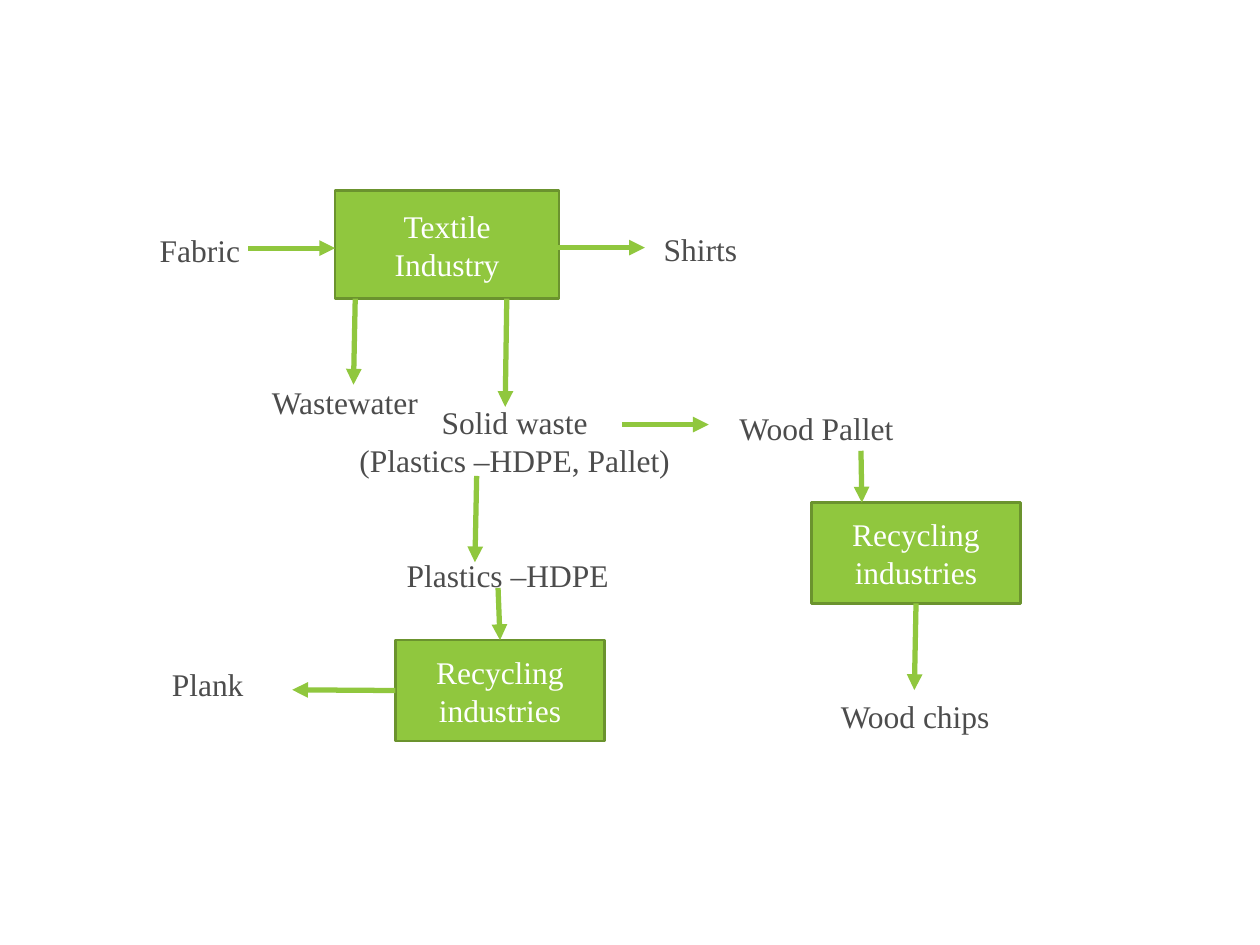
from lxml.etree import SubElement
from pptx import Presentation
from pptx.dml.color import RGBColor
from pptx.enum.shapes import MSO_CONNECTOR as Connector, MSO_SHAPE as Shape
from pptx.enum.text import MSO_ANCHOR as Anchor, MSO_AUTO_SIZE as AutoSize, PP_ALIGN as Align
from pptx.oxml.ns import qn
from pptx.util import Pt

GREEN = "90C73E"
DARK_GREEN = "6B932E"
GREY = "4C4C4C"
WHITE = "FFFFFF"
TOP, LEFT, BOTTOM = 0, 1, 2


def color(hex_text):
    return RGBColor.from_string(hex_text)


def write(shape, text, text_color, align):
    frame = shape.text_frame
    frame.text = text
    for para in frame.paragraphs:
        para.alignment = align
        for span in para.runs:
            span.font.name = "Times New Roman"
            span.font.size = Pt(18)
            span.font.color.rgb = color(text_color)


def add_process(page, text, left, top, width, height):
    box = page.shapes.add_shape(Shape.RECTANGLE, Pt(left), Pt(top), Pt(width), Pt(height))
    box.shadow.inherit = False
    box.fill.solid()
    box.fill.fore_color.rgb = color(GREEN)
    box.line.color.rgb = color(DARK_GREEN)
    box.line.width = Pt(1.5)
    box.text_frame.word_wrap = True
    box.text_frame.vertical_anchor = Anchor.MIDDLE
    write(box, text, WHITE, Align.CENTER)
    return box


def add_label(page, text, left, top, width, height=29, align=Align.CENTER):
    box = page.shapes.add_textbox(Pt(left), Pt(top), Pt(width), Pt(height))
    box.text_frame.word_wrap = False
    box.text_frame.auto_size = AutoSize.SHAPE_TO_FIT_TEXT
    write(box, text, GREY, align)


def add_arrow(page, start, end, source=None, target=None):
    arrow = page.shapes.add_connector(Connector.STRAIGHT, *map(Pt, start + end))
    if source:
        arrow.begin_connect(*source)
    if target:
        arrow.end_connect(*target)
    arrow.line.color.rgb = color(GREEN)
    arrow.line.width = Pt(3)
    SubElement(arrow.line._get_or_add_ln(), qn("a:tailEnd"), type="triangle")
    SubElement(arrow._element.spPr, qn("a:effectLst"))


def main():
    deck = Presentation()
    deck.slide_width, deck.slide_height = Pt(720), Pt(540)
    page = deck.slides.add_slide(deck.slide_layouts[6])

    add_process(page, "Textile\nIndustry", 191.5, 108.7, 128, 62)
    plank_maker = add_process(page, "Recycling industries", 226, 365.8, 119.5, 57.6)
    chip_maker = add_process(page, "Recycling industries", 463.7, 287.2, 119.5, 57.6)

    add_label(page, "Fabric", 84.2, 128.5, 61, align=Align.LEFT)
    add_label(page, "Shirts", 372.2, 128, 57, align=Align.LEFT)
    add_label(page, "Wastewater", 148.3, 215.3, 98.6, align=Align.LEFT)
    add_label(page, "Solid waste\n(Plastics –HDPE, Pallet)", 197.3, 226.8, 193.7, 51)
    add_label(page, "Wood Pallet", 414.7, 230.4, 103.7)
    add_label(page, "Plastics –HDPE", 224.6, 314, 131)
    add_label(page, "Wood chips", 473, 394.6, 100)
    add_label(page, "Plank", 90.7, 376.6, 56)

    add_arrow(page, (142, 141.8), (191.5, 141.8))
    add_arrow(page, (319, 141.5), (368.5, 141.5))
    add_arrow(page, (203, 170.7), (202, 219.8))
    add_arrow(page, (289.6, 170.7), (288.7, 232.5))
    add_arrow(page, (355.5, 242.6), (405, 242.6))
    add_arrow(page, (272.4, 272), (271.4, 321.3))
    add_arrow(page, (492, 257.6), (492.5, 287.2))
    add_arrow(page, (284.6, 336), (285.75, 365.8), target=(plank_maker, TOP))
    add_arrow(page, (226, 394.6), (167, 394.2), source=(plank_maker, LEFT))
    add_arrow(page, (523.45, 344.8), (522.5, 394.3), source=(chip_maker, BOTTOM))

    deck.save("out.pptx")


if __name__ == "__main__":
    main()
